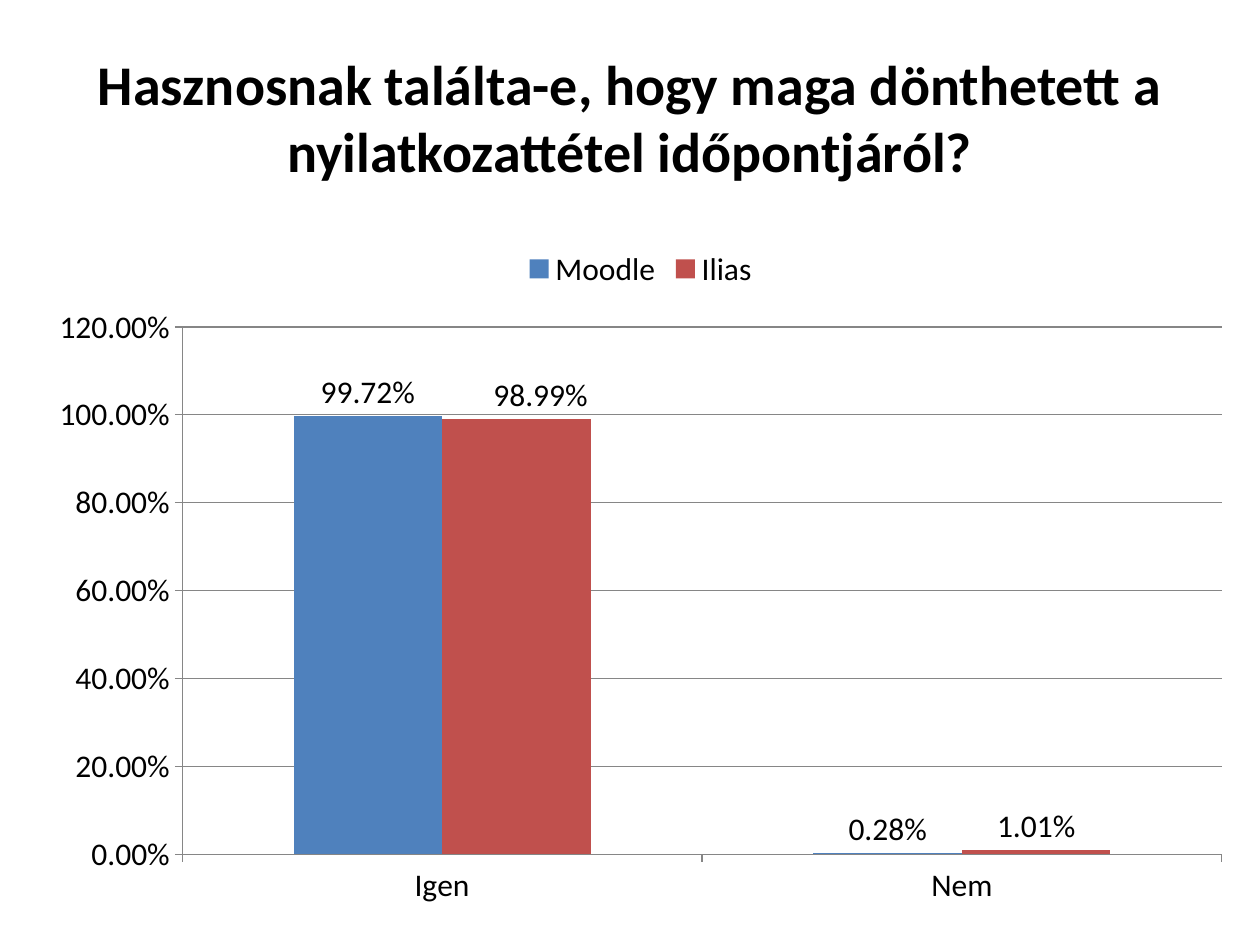
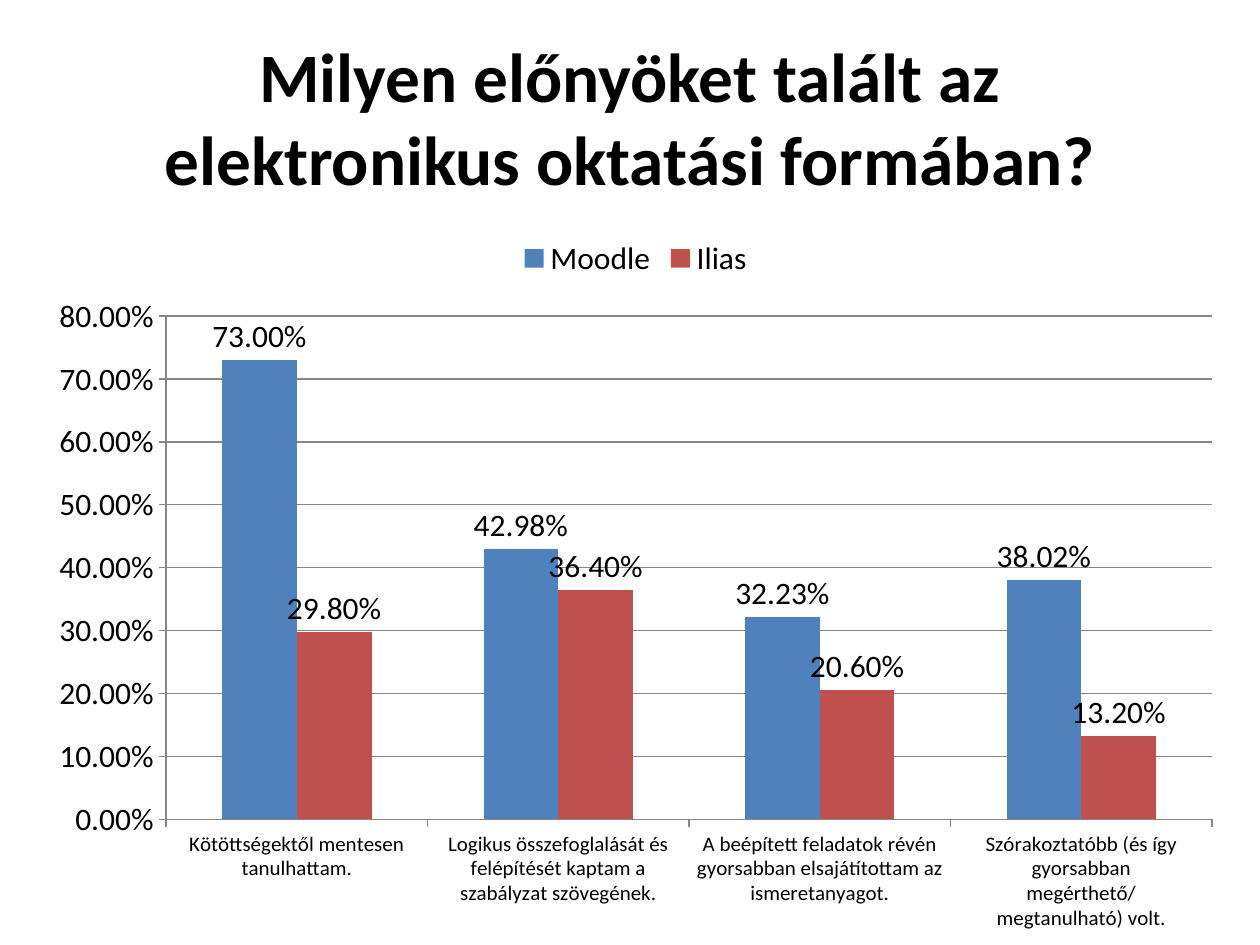
from lxml import etree
from pptx import Presentation
from pptx.chart.data import CategoryChartData
from pptx.dml.color import RGBColor
from pptx.enum.chart import XL_CHART_TYPE as CHART, XL_LABEL_POSITION as LABEL_POS
from pptx.enum.chart import XL_LEGEND_POSITION as LEGEND_POS, XL_TICK_MARK as TICK
from pptx.enum.text import MSO_ANCHOR, MSO_AUTO_SIZE, PP_ALIGN
from pptx.oxml.ns import qn
from pptx.util import Inches, Pt

FONT = "Calibri"
BLACK = RGBColor(0x00, 0x00, 0x00)
GRID_GREY = RGBColor(0x86, 0x86, 0x86)
MOODLE_BLUE = RGBColor(0x4F, 0x81, 0xBD)
ILIAS_RED = RGBColor(0xC0, 0x50, 0x4D)
SERIES_COLORS = (MOODLE_BLUE, ILIAS_RED)
PERCENT = r"#,##0.00\%"
TITLE_ONLY = 5


def set_font(font, size):
    font.name = FONT
    font.size = Pt(size)
    font.color.rgb = BLACK


def add_titled_slide(prs, title, size):
    slide = prs.slides.add_slide(prs.slide_layouts[TITLE_ONLY])
    sp = slide.shapes.title
    sp.left, sp.top = Inches(0.5), Inches(0.3)
    sp.width, sp.height = Inches(9), Inches(1.25)
    tf = sp.text_frame
    tf.auto_size = MSO_AUTO_SIZE.NONE
    tf.vertical_anchor = MSO_ANCHOR.MIDDLE
    p = tf.paragraphs[0]
    p.alignment = PP_ALIGN.CENTER
    r = p.add_run()
    r.text = title
    set_font(r.font, size)
    r.font.bold = True
    return slide


def style_axis(axis, size):
    axis.major_tick_mark = TICK.OUTSIDE
    axis.minor_tick_mark = TICK.NONE
    axis.format.line.color.rgb = GRID_GREY
    set_font(axis.tick_labels.font, size)


def style_value_axis(axis, maximum, step):
    style_axis(axis, 18)
    axis.minimum_scale, axis.maximum_scale = 0, maximum
    axis.major_unit = step
    axis.tick_labels.number_format = PERCENT
    axis.tick_labels.number_format_is_linked = False
    axis.has_major_gridlines = True
    axis.major_gridlines.format.line.color.rgb = GRID_GREY


def style_series(series, color):
    series.format.fill.solid()
    series.format.fill.fore_color.rgb = color
    series.invert_if_negative = False
    labels = series.data_labels
    labels.show_value = True
    labels.number_format = PERCENT
    labels.number_format_is_linked = False
    labels.position = LABEL_POS.OUTSIDE_END
    set_font(labels.font, 18)


def add_survey_chart(slide, box, categories, answers, maximum, step, category_size=18):
    data = CategoryChartData(number_format=PERCENT)
    data.categories = categories
    for name, values in answers.items():
        data.add_series(name, values)
    chart = slide.shapes.add_chart(
        CHART.COLUMN_CLUSTERED, *map(Inches, box), data).chart
    set_font(chart.font, 18)
    chart.has_title = False
    chart.has_legend = True
    chart.legend.position = LEGEND_POS.TOP
    chart.legend.include_in_layout = False
    set_font(chart.legend.font, 18)
    style_axis(chart.category_axis, category_size)
    style_value_axis(chart.value_axis, maximum, step)
    plot = chart.plots[0]
    plot.gap_width, plot.overlap = 150, 0
    plot.vary_by_categories = False
    for series, color in zip(plot.series, SERIES_COLORS):
        style_series(series, color)
    return chart


def shift_label(series, index, dx):
    """Move one data label right by dx, a fraction of the chart width."""
    series.points[index].data_label.position = LABEL_POS.OUTSIDE_END
    label = series._element.findall(".//" + qn("c:dLbl"))[0]
    layout = etree.Element(qn("c:layout"))
    manual = etree.SubElement(layout, qn("c:manualLayout"))
    for axis, offset in (("x", dx), ("y", 0)):
        etree.SubElement(manual, qn("c:" + axis)).set("val", str(offset))
    number_format = etree.Element(qn("c:numFmt"))
    number_format.set("formatCode", PERCENT)
    number_format.set("sourceLinked", "0")
    label.insert(1, layout)
    label.insert(2, number_format)


def add_timing_slide(prs):
    slide = add_titled_slide(
        prs, "Hasznosnak találta-e, hogy maga dönthetett a "
        "nyilatkozattétel időpontjáról?", 32)
    chart = add_survey_chart(
        slide, (0.28, 1.86, 9.61, 5.43), ["Igen", "Nem"],
        {"Moodle": (99.72, 0.28), "Ilias": (98.99, 1.01)}, 120, 20)
    shift_label(chart.plots[0].series[1], 0, 0.02)


def add_benefits_slide(prs):
    slide = add_titled_slide(
        prs, "Milyen előnyöket talált az elektronikus oktatási formában?", 39.6)
    benefits = [
        "Kötöttségektől mentesen tanulhattam.",
        "Logikus összefoglalását és felépítését kaptam a szabályzat szövegének.",
        "A beépített feladatok révén gyorsabban elsajátítottam az ismeretanyagot.",
        "Szórakoztatóbb (és így gyorsabban megérthető/megtanulható) volt.",
    ]
    add_survey_chart(
        slide, (0.28, 1.78, 9.53, 5.59), benefits,
        {"Moodle": (73, 42.98, 32.23, 38.02), "Ilias": (29.8, 36.4, 20.6, 13.2)},
        80, 10, category_size=12)


def main():
    prs = Presentation()
    prs.slide_width, prs.slide_height = Inches(10), Inches(7.5)
    add_timing_slide(prs)
    add_benefits_slide(prs)
    prs.save("out.pptx")


if __name__ == "__main__":
    main()
